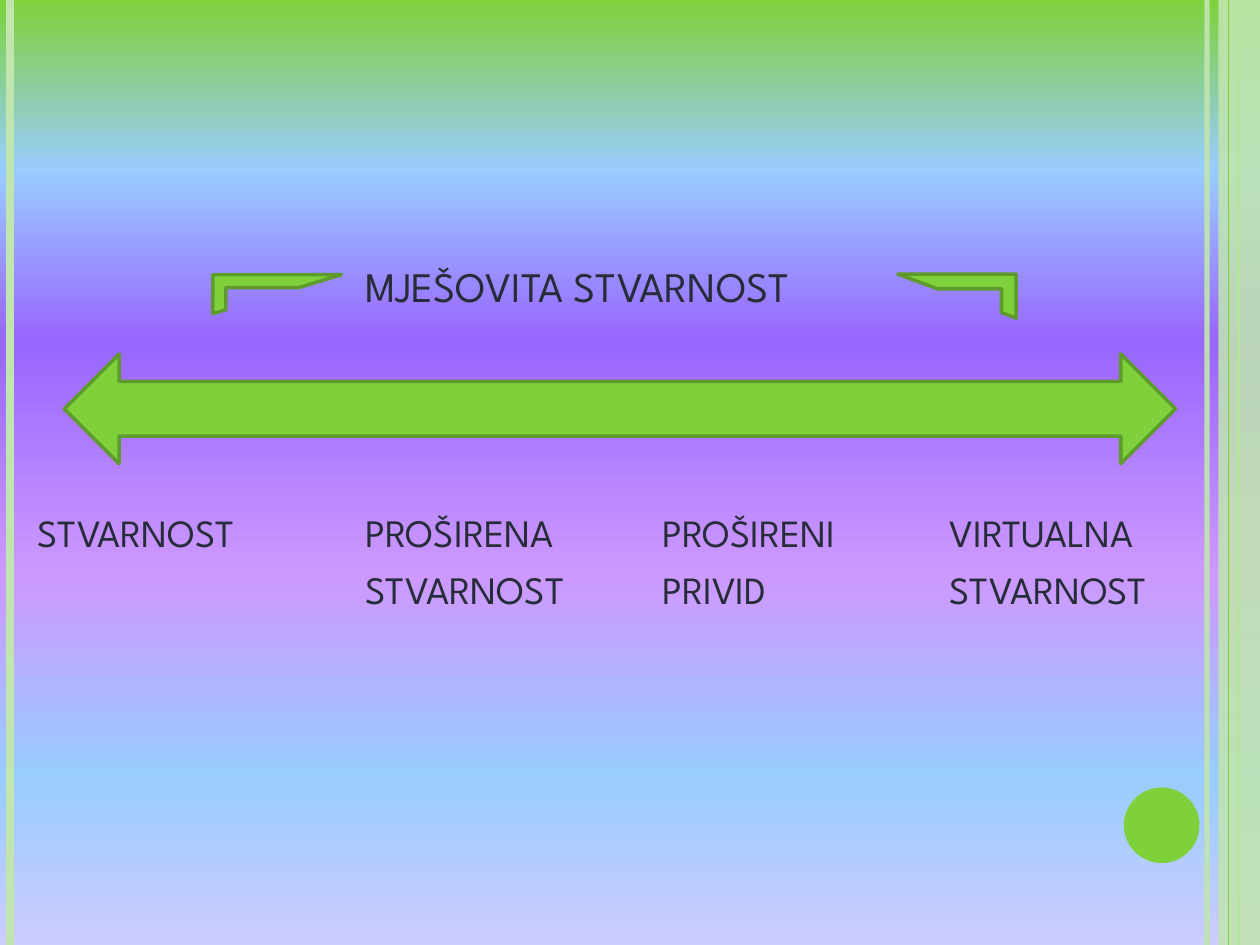
import copy

import pptx
import pptx.dml.color
import pptx.enum.shapes
import pptx.oxml
import pptx.oxml.ns
import pptx.util

WIDTH, HEIGHT = 10, 7.5
GREEN, PALE, DARK_GREEN, INK = "7FD13B", "C0E5AF", "5E9B2C", "272D38"
SKY = [(0, GREEN), (18, "99CCFF"), (36, "9966FF"),
       (61, "CC99FF"), (82, "99CCFF"), (100, "CCCCFF")]
LABEL_ROW = 3.99
FORMAT = {"name": "League Spartan"}
SHAPES = pptx.enum.shapes.MSO_SHAPE


def inches(*lengths):
    return [pptx.util.Inches(length) for length in lengths]


def colour(value):
    return pptx.dml.color.RGBColor.from_string(value)


def set_opacity(shape, percent):
    for item in shape._element.spPr.iter(pptx.oxml.ns.qn("a:srgbClr")):
        alpha = pptx.oxml.parse_xml(
            f'<a:alpha {pptx.oxml.ns.nsdecls("a")} val="{percent * 1000}"/>')
        item.append(alpha)


def paint_background(page):
    fill = page.background.fill
    fill.gradient()
    fill.gradient_angle = 270
    # The default gradient has two stops, so add the missing ones
    stops = fill.gradient_stops[0]._gs.getparent()
    while len(stops) < len(SKY):
        stops.append(copy.deepcopy(stops[0]))
    for stop, (percent, value) in zip(fill.gradient_stops, SKY):
        stop.position = percent / 100
        stop.color.rgb = colour(value)


def add_stripe(page, x, value, weight, opacity=100):
    stripe = page.shapes.add_connector(
        pptx.enum.shapes.MSO_CONNECTOR.STRAIGHT, *inches(x, 0, x, HEIGHT))
    stripe.line.color.rgb = colour(value)
    stripe.line.width = pptx.util.Pt(weight)
    if opacity < 100:
        set_opacity(stripe, opacity)
    stripe._element.spPr.append(pptx.oxml.parse_xml(
        f'<a:effectLst {pptx.oxml.ns.nsdecls("a")}/>'))


def add_figure(page, kind, frame, fill=GREEN, outline=None, turn=0):
    figure = page.shapes.add_shape(kind, *inches(*frame))
    figure.shadow.inherit = False
    figure.rotation = turn
    figure.fill.solid()
    figure.fill.fore_color.rgb = colour(fill)
    if outline:
        figure.line.color.rgb = colour(outline)
        figure.line.width = pptx.util.Pt(2)
    else:
        figure.line.fill.background()
    return figure


def add_label(page, frame, lines, size=22):
    box = page.shapes.add_textbox(*inches(*frame))
    box.text_frame.word_wrap = True
    box.text_frame.text = "\n".join(lines)
    for para in box.text_frame.paragraphs:
        para.space_before = pptx.util.Pt(6)
        # Hanging indent
        hang = pptx.util.Inches(0.3)
        properties = para._p.get_or_add_pPr()
        properties.set("marL", str(hang))
        properties.set("indent", str(-hang))
        for span in para.runs:
            span.font.color.rgb = colour(INK)
            for name, value in {**FORMAT, "size": pptx.util.Pt(size)}.items():
                setattr(span.font, name, value)


def add_decoration(page):
    add_stripe(page, 9.58, PALE, 3, 93)
    add_stripe(page, 0.08, PALE, 4.5)
    add_stripe(page, 9.83, GREEN, 1.5)
    band = add_figure(page, SHAPES.RECTANGLE, (9.67, 0, 0.33, HEIGHT), PALE)
    set_opacity(band, 87)
    add_stripe(page, 9.75, GREEN, 0.75)
    add_figure(page, SHAPES.OVAL, (8.92, 6.25, 0.6, 0.6))


def main():
    deck = pptx.Presentation()
    deck.slide_width, deck.slide_height = inches(WIDTH, HEIGHT)
    page = deck.slides.add_slide(deck.slide_layouts.get_by_name("Blank"))
    paint_background(page)
    add_decoration(page)

    # Continuum arrow with its stages below
    add_figure(page, SHAPES.LEFT_RIGHT_ARROW, (0.51, 2.81, 8.82, 0.87),
               outline=DARK_GREEN)
    stages = [
        (0.2, 2.17, 0.63, 22, ["STVARNOST"]),
        (2.8, 2.2, 0.94, 22.2, ["PROŠIRENA", "STVARNOST"]),
        (5.16, 2.2, 1.1, 22, ["PROŠIRENI", "PRIVID"]),
        (7.44, 2.36, 0.94, 22, ["VIRTUALNA", "STVARNOST"]),
    ]
    for left, width, height, size, lines in stages:
        add_label(page, (left, LABEL_ROW, width, height), lines, size)

    # Mixed reality span, bracketed on both sides
    add_label(page, (2.8, 2.02, 4.57, 0.63), ["MJEŠOVITA STVARNOST"], 24)
    for frame, turn in [((1.69, 2.18, 1.02, 0.31), 0),
                        ((7.42, 1.88, 0.35, 0.94), 90)]:
        add_figure(page, SHAPES.HALF_FRAME, frame, outline=DARK_GREEN, turn=turn)

    deck.save("out.pptx")


if __name__ == "__main__":
    main()
